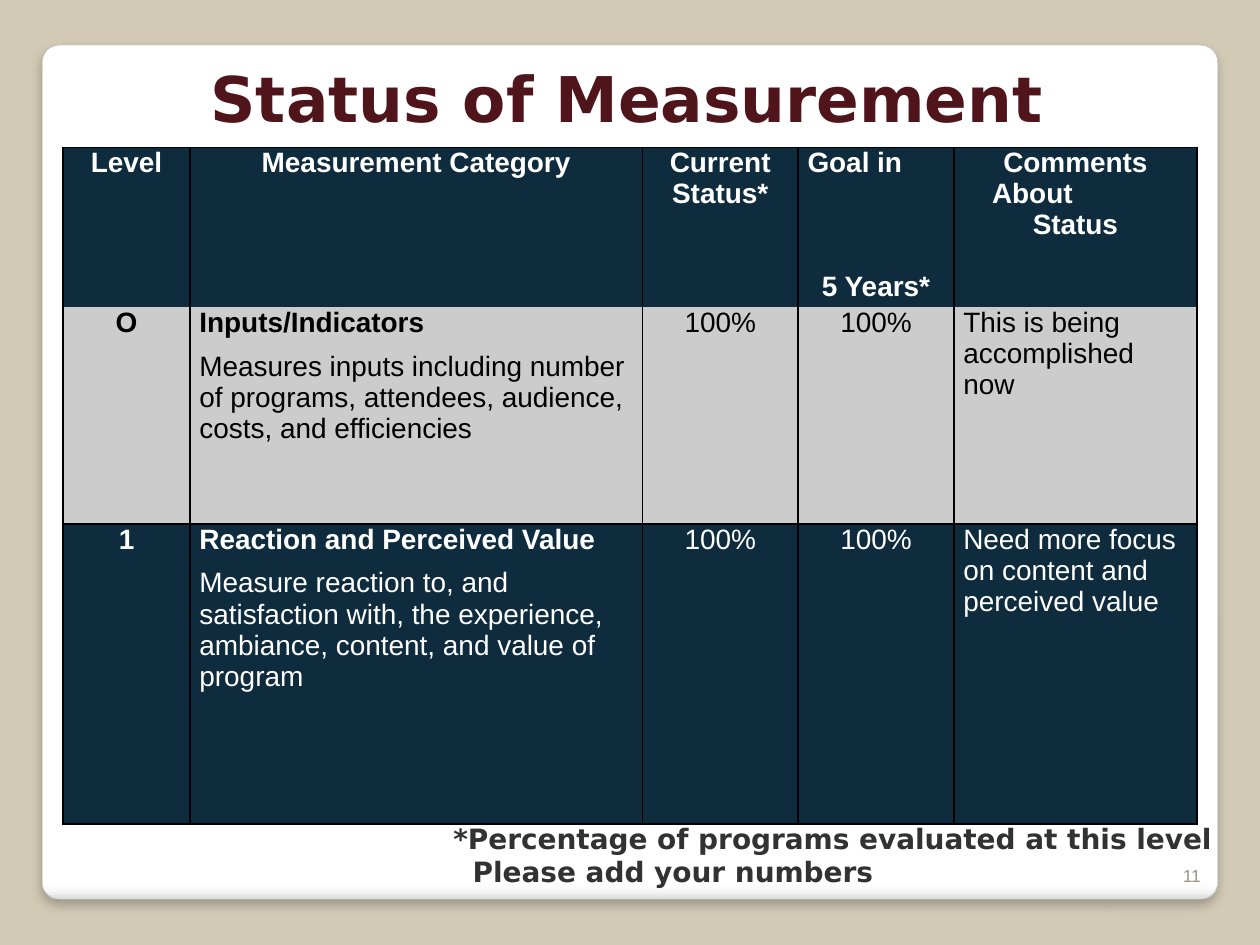
from pptx import Presentation
from pptx.dml.color import RGBColor
from pptx.enum.shapes import MSO_SHAPE
from pptx.enum.text import MSO_ANCHOR, PP_ALIGN
from pptx.oxml import parse_xml
from pptx.oxml.ns import nsdecls, qn
from pptx.util import Cm, Pt

LEFT, CENTER, RIGHT = PP_ALIGN.LEFT, PP_ALIGN.CENTER, PP_ALIGN.RIGHT
TOP, BOTTOM = MSO_ANCHOR.TOP, MSO_ANCHOR.BOTTOM
NAVY, GRAY, WHITE, BLACK = "0E2C3E", "CCCCCC", "FFFFFF", "000000"


def rgb(value):
    return RGBColor.from_string(value)


def write(tf, i, text, font, size, color, bold=False, align=LEFT, before=0, margin=0):
    p = tf.paragraphs[0] if i == 0 else tf.add_paragraph()
    p.add_run().text = text
    p.alignment = align
    p.space_before = Pt(before)
    p.font.name = font
    p.font.size = Pt(size)
    p.font.bold = bold
    p.font.color.rgb = rgb(color)
    if margin:
        p._p.get_or_add_pPr().set("marL", str(Cm(margin)))


prs = Presentation()
prs.slide_width = Cm(25.4)
prs.slide_height = Cm(19.05)
s = prs.slides.add_slide(prs.slide_layouts[6])
s.background.fill.solid()
s.background.fill.fore_color.rgb = rgb("D2CAB5")

panel = s.shapes.add_shape(MSO_SHAPE.ROUNDED_RECTANGLE, Cm(0.85), Cm(0.91), Cm(23.7), Cm(17.22))
panel.adjustments[0] = 0.02
panel.line.color.rgb = rgb("A4A4A4")
panel.line.width = Pt(0.16)
panel.fill.gradient()
panel.fill.gradient_angle = 270
stops = panel._element.spPr.find(qn("a:gradFill")).find(qn("a:gsLst"))
for stop in list(stops):
    stops.remove(stop)
for percent, color in [(0, WHITE), (98, WHITE), (99, "F7F7F7"), (100, "DADADA")]:
    stops.append(parse_xml(
        f'<a:gs {nsdecls("a")} pos="{percent * 1000}"><a:srgbClr val="{color}"/></a:gs>'))
panel.shadow.inherit = False
panel._element.spPr.find(qn("a:effectLst")).append(parse_xml(
    f'<a:outerShdw {nsdecls("a")} blurRad="{Pt(6)}" dist="{Pt(4)}" dir="5400000" algn="tl" '
    'rotWithShape="0"><a:srgbClr val="000000"><a:alpha val="25000"/></a:srgbClr></a:outerShdw>'))

texts = [
    ((23.19, 16.97, 1.27, 1.02), BOTTOM,
     [("11", "Arial", 10, "9B9586", False, RIGHT)]),
    ((1.27, -0.08, 22.73, 2.92), BOTTOM,
     [("Status of Measurement", "DejaVu Sans", 36, "50141B", True, CENTER)]),
    ((1.27, 16.43, 24.13, 1.7), TOP,
     [("*Percentage of programs evaluated at this level", "DejaVu Sans", 16, "323232", True,
       LEFT, 0, 7.62),
      ("Please add your numbers", "DejaVu Sans", 16, "323232", True, LEFT, 0, 8.01)]),
]
for box, anchor, lines in texts:
    tf = s.shapes.add_textbox(*map(Cm, box)).text_frame
    tf.word_wrap = True
    tf.vertical_anchor = anchor
    for i, line in enumerate(lines):
        write(tf, i, *line)

header = [
    [("Level", CENTER)],
    [("Measurement Category", CENTER)],
    [("Current Status*", CENTER)],
    [("Goal in", LEFT), ("5 Years*", CENTER, 53)],
    [("Comments", CENTER), ("About", LEFT, 0, 0.58), ("Status", CENTER)],
]
levels = [
    ("O", "Inputs/Indicators",
     "Measures inputs including number of programs, attendees, audience, costs, and efficiencies",
     "100%", "100%", "This is being accomplished now"),
    ("1", "Reaction and Perceived Value",
     "Measure reaction to, and satisfaction with, the experience, ambiance, content, and value "
     "of program",
     "100%", "100%", "Need more focus on content and perceived value"),
]
rows = [(NAVY, WHITE, [[(line[0], True, *line[1:]) for line in cell] for cell in header])]
for (fill, color), (level, name, detail, status, goal, comment) in zip(
        [(GRAY, BLACK), (NAVY, WHITE)], levels):
    rows.append((fill, color, [
        [(level, True, CENTER)],
        [(name, True, LEFT), (detail, False, LEFT, 7.2)],
        [(status, False, CENTER)],
        [(goal, False, CENTER)],
        [(comment, False, LEFT)],
    ]))

widths = [2.56, 9.12, 3.14, 3.14, 4.9]
heights = [3.02, 4.37, 6.05]
frame = s.shapes.add_table(3, 5, Cm(1.27), Cm(2.97), Cm(sum(widths)), Cm(sum(heights)))
table = frame.table
table.first_row = table.horz_banding = False
table._tbl.tblPr.find(qn("a:tableStyleId")).text = "{2D5ABB26-0587-4C30-8999-92F81FD0307C}"
for column, width in zip(table.columns, widths):
    column.width = Cm(width)
for row, height in zip(table.rows, heights):
    row.height = Cm(height)

edges = [("lnL", "lnR", "lnT"), ("lnL", "lnR", "lnB"), ("lnL", "lnR", "lnT", "lnB")]
for r, (fill, color, cells) in enumerate(rows):
    for c, lines in enumerate(cells):
        cell = table.cell(r, c)
        cell.margin_left = cell.margin_right = Cm(0.19)
        cell.margin_top = cell.margin_bottom = 0
        for i, (text, bold, *layout) in enumerate(lines):
            write(cell.text_frame, i, text, "Arial", 16, color, bold, *layout)
        tcPr = cell._tc.get_or_add_tcPr()
        for edge in edges[r]:
            tcPr.append(parse_xml(
                f'<a:{edge} {nsdecls("a")} w="{Pt(1)}"><a:solidFill><a:srgbClr val="{BLACK}"/>'
                f'</a:solidFill></a:{edge}>'))
        cell.fill.solid()
        cell.fill.fore_color.rgb = rgb(fill)

prs.save("out.pptx")
